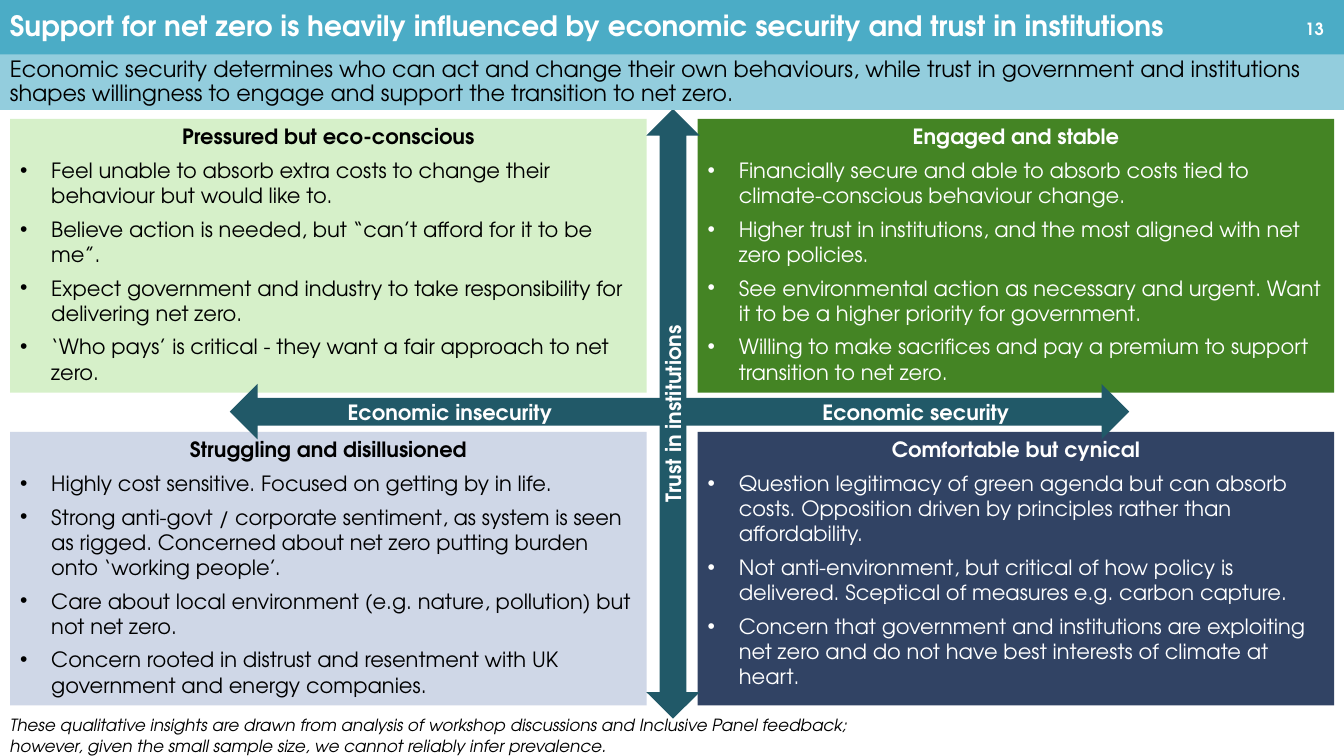
from dataclasses import dataclass

from lxml.etree import SubElement
from pptx import Presentation
from pptx.dml.color import RGBColor
from pptx.enum.shapes import MSO_SHAPE
from pptx.enum.text import MSO_ANCHOR, PP_ALIGN
from pptx.oxml.ns import qn
from pptx.util import Inches, Length, Pt


@dataclass(frozen=True)
class Theme:
    font: str = "TeX Gyre Adventor"
    white: str = "FFFFFF"
    black: str = "000000"
    headline: str = "4BACC6"
    summary: str = "93CDDD"
    axis: str = "215968"
    pressured: str = "D6F0C9"
    engaged: str = "448424"
    struggling: str = "CFD7E7"
    cynical: str = "314364"
    headline_size: int = 20
    summary_size: int = 16
    body_size: int = 15
    small_size: int = 12


@dataclass(frozen=True)
class Area:
    """Left, top, width and height as percentages of the slide."""

    left: float
    top: float
    width: float
    height: float


@dataclass(frozen=True)
class Panel:
    text: str
    area: Area
    size: int
    color: str
    fill: str | None = None
    bold: bool = False
    italic: bool = False
    align: PP_ALIGN = PP_ALIGN.LEFT
    line_spacing: float = 1.0
    preset: MSO_SHAPE = MSO_SHAPE.RECTANGLE
    rotation: int = 0


@dataclass(frozen=True)
class Segment:
    heading: str
    points: tuple[str, ...]
    column: int
    row: int
    fill: str
    color: str


THEME = Theme()
WIDTH, HEIGHT = Inches(13.33), Inches(7.5)
COLUMNS = (0.75, 51.91)
ROWS = (15.73, 57.13)
SEGMENT_WIDTH, SEGMENT_HEIGHT = 47.36, 36.2
AXIS_INSET, AXIS_TAB = 7.73, 35.33
BULLET_INDENT = Inches(0.31)

HEADLINE = Panel(
    "Support for net zero is heavily influenced by economic security and trust in institutions",
    Area(0, 0, 100, 7.33), THEME.headline_size, THEME.white, THEME.headline,
    bold=True, line_spacing=0.9,
)
ECONOMIC_AXIS = Panel(
    "Economic insecurity\tEconomic security",
    Area(17.1, 50.8, 66.92, 7.33), THEME.body_size, THEME.white, THEME.axis,
    bold=True, preset=MSO_SHAPE.LEFT_RIGHT_ARROW,
)
TRUST_AXIS = Panel(
    "Trust in institutions",
    Area(27.38, 51.2, 45.39, 7.07), THEME.body_size, THEME.white, THEME.axis,
    bold=True, align=PP_ALIGN.CENTER, preset=MSO_SHAPE.LEFT_RIGHT_ARROW, rotation=270,
)
SUMMARY = Panel(
    "Economic security determines who can act and change their own behaviours, while trust in "
    "government and institutions shapes willingness to engage and support the transition to net zero.",
    Area(0, 7.2, 100, 7.33), THEME.summary_size, THEME.black, THEME.summary, line_spacing=0.9,
)
PAGE_NUMBER = Panel(
    "13", Area(94.37, 0.8, 4.88, 6), THEME.small_size, THEME.white,
    bold=True, align=PP_ALIGN.RIGHT,
)
CAVEAT = Panel(
    "These qualitative insights are drawn from analysis of workshop discussions and Inclusive Panel "
    "feedback; however, given the small sample size, we cannot reliably infer prevalence.",
    Area(0, 95.07, 65.94, 4.4), THEME.small_size, THEME.black, italic=True,
)

SEGMENTS = (
    Segment("Engaged and stable", (
        "Financially secure and able to absorb costs tied to climate-conscious behaviour change.",
        "Higher trust in institutions, and the most aligned with net zero policies.",
        "See environmental action as necessary and urgent. Want it to be a higher priority for government.",
        "Willing to make sacrifices and pay a premium to support transition to net zero.",
    ), 1, 0, THEME.engaged, THEME.white),
    Segment("Pressured but eco-conscious", (
        "Feel unable to absorb extra costs to change their behaviour but would like to.",
        "Believe action is needed, but “can’t afford for it to be me”.",
        "Expect government and industry to take responsibility for delivering net zero.",
        "‘Who pays’ is critical - they want a fair approach to net zero.",
    ), 0, 0, THEME.pressured, THEME.black),
    Segment("Comfortable but cynical", (
        "Question legitimacy of green agenda but can absorb costs. Opposition driven by principles "
        "rather than affordability.",
        "Not anti-environment, but critical of how policy is delivered. Sceptical of measures e.g. "
        "carbon capture.",
        "Concern that government and institutions are exploiting net zero and do not have best "
        "interests of climate at heart.",
    ), 1, 1, THEME.cynical, THEME.white),
    Segment("Struggling and disillusioned", (
        "Highly cost sensitive. Focused on getting by in life.",
        "Strong anti-govt / corporate sentiment, as system is seen as rigged. Concerned about net "
        "zero putting burden onto ‘working people’.",
        "Care about local environment (e.g. nature, pollution) but not net zero.",
        "Concern rooted in distrust and resentment with UK government and energy companies.",
    ), 0, 1, THEME.struggling, THEME.black),
)


def across(share: float) -> Length:
    return Length(round(WIDTH * share / 100))


def down(share: float) -> Length:
    return Length(round(HEIGHT * share / 100))


def format_runs(paragraph, size: int, color: str, bold: bool, italic: bool = False) -> None:
    for run in paragraph.runs:
        run.font.name = THEME.font
        run.font.size = Pt(size)
        run.font.bold = bold
        run.font.italic = italic
        run.font.color.rgb = RGBColor.from_string(color)


def draw_panel(slide, panel: Panel):
    area = panel.area
    bounds = across(area.left), down(area.top), across(area.width), down(area.height)
    if panel.fill is None:
        drawn = slide.shapes.add_textbox(*bounds)
    else:
        drawn = slide.shapes.add_shape(panel.preset, *bounds)
        drawn.shadow.inherit = False
        drawn.fill.solid()
        drawn.fill.fore_color.rgb = RGBColor.from_string(panel.fill)
        drawn.line.fill.background()
    drawn.rotation = panel.rotation
    frame = drawn.text_frame
    frame.word_wrap = True
    frame.vertical_anchor = MSO_ANCHOR.MIDDLE
    frame.text = panel.text
    paragraph = frame.paragraphs[0]
    paragraph.alignment = panel.align
    paragraph.line_spacing = panel.line_spacing
    format_runs(paragraph, panel.size, panel.color, panel.bold, panel.italic)
    return drawn


def draw_segment(slide, segment: Segment) -> None:
    area = Area(COLUMNS[segment.column], ROWS[segment.row], SEGMENT_WIDTH, SEGMENT_HEIGHT)
    frame = draw_panel(slide, Panel(
        segment.heading, area, THEME.body_size, segment.color, segment.fill,
        bold=True, align=PP_ALIGN.CENTER,
    )).text_frame
    frame.vertical_anchor = MSO_ANCHOR.TOP
    for point in segment.points:
        paragraph = frame.add_paragraph()
        paragraph.text = point
        paragraph.alignment = PP_ALIGN.LEFT
        properties = paragraph._p.get_or_add_pPr()
        properties.set("marL", str(BULLET_INDENT))
        properties.set("indent", str(-BULLET_INDENT))
        SubElement(properties, qn("a:buFont"), typeface="Arial")
        SubElement(properties, qn("a:buChar"), char="•")
        format_runs(paragraph, THEME.body_size, segment.color, False)
    for paragraph in frame.paragraphs:
        paragraph.space_after = Pt(6)


def draw_economic_axis(slide) -> None:
    frame = draw_panel(slide, ECONOMIC_AXIS).text_frame
    frame.margin_left = across(AXIS_INSET)
    properties = frame.paragraphs[0]._p.get_or_add_pPr()
    stops = SubElement(properties, qn("a:tabLst"))
    SubElement(stops, qn("a:tab"), pos=str(across(AXIS_TAB)), algn="l")


def main() -> None:
    deck = Presentation()
    deck.slide_width, deck.slide_height = WIDTH, HEIGHT
    slide = deck.slides.add_slide(deck.slide_layouts[6])
    draw_panel(slide, HEADLINE)
    for segment in SEGMENTS:
        draw_segment(slide, segment)
    draw_economic_axis(slide)
    for panel in (TRUST_AXIS, SUMMARY, PAGE_NUMBER, CAVEAT):
        draw_panel(slide, panel)
    deck.save("out.pptx")


if __name__ == "__main__":
    main()
